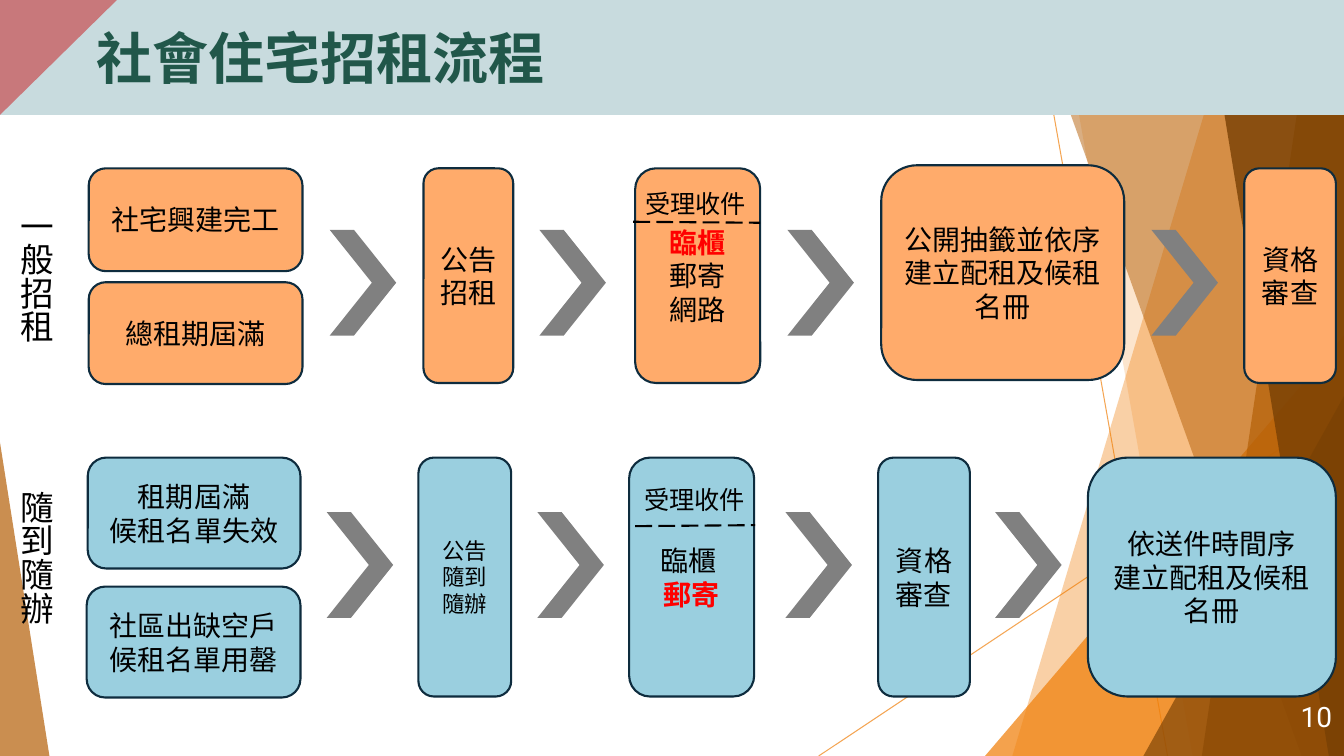
from lxml import etree
from pptx import Presentation, util as u
from pptx.dml.color import RGBColor
from pptx.enum import dml, shapes as s, text as t
from pptx.oxml.ns import qn

deck = Presentation()
deck.slide_width, deck.slide_height = u.Inches(13.33), u.Inches(7.5)
page = deck.slides.add_slide(deck.slide_layouts[6])
kit = page.shapes
# One column and one row of the grid
col, row = deck.slide_width / 13.33, deck.slide_height / 7.5
hues = {"band": "C8DBDE", "title": "21574A", "corner": "C8787B",
        "warm": "FFAB6B", "cool": "9ACFDF", "edge": "0E2C3E",
        "arrow": "808080", "ink": "000000", "hot": "FF0000", "white": "FFFFFF",
        "amber": "F07F09", "rust": "B45F07", "brown": "784004"}
kinds = s.MSO_SHAPE
left, mid, right = t.PP_ALIGN.LEFT, t.PP_ALIGN.CENTER, t.PP_ALIGN.RIGHT


def paint(shape, hue, alpha=100):
    """Fill a shape, or colour a connector, with optional transparency."""
    if hasattr(shape, "begin_x"):
        fill = shape.line.fill
        etree.SubElement(shape._element.spPr, qn("a:effectLst"))
    else:
        fill = shape.fill
        shape.shadow.inherit = False
        shape.line.fill.background()
    fill.solid()
    fill.fore_color.rgb = RGBColor.from_string(hues[hue])
    if alpha < 100:
        for tint in shape._element.spPr.iter(qn("a:srgbClr")):
            etree.SubElement(tint, qn("a:alpha")).set("val", str(alpha * 1000))


def write(shape, lines, size, hue="ink", align=mid, face="Noto Sans CJK SC", hot=""):
    """Set one paragraph per line; the line named hot is bold red."""
    frame = shape.text_frame
    frame.word_wrap = True
    frame.vertical_anchor = t.MSO_ANCHOR.MIDDLE
    for i, line in enumerate(lines):
        para = frame.paragraphs[0] if i == 0 else frame.add_paragraph()
        para.alignment = align
        run = para.add_run()
        run.text = line
        font = run.font
        font.size, font.name, font.bold = u.Pt(size), face, line == hot
        font.color.rgb = RGBColor.from_string(hues["hot" if line == hot else hue])
        if face != "Roboto":
            etree.SubElement(run._r.get_or_add_rPr(), qn("a:ea")).set("typeface", face)


# Thin rays behind the right edge
for x1, y1, x2, y2 in [(10.25, 0, 11.58, 7.5), (13.33, 4.03, 8.12, 7.5)]:
    ray = kit.add_connector(s.MSO_CONNECTOR.STRAIGHT, int(x1 * col), int(y1 * row),
                            int(x2 * col), int(y2 * row))
    ray.line.width = u.Pt(0.75)
    paint(ray, "amber", 70)

# Facets: a slab has top x and bottom x; a wedge has x, y, w, h and apex
facets = [("slab", (12.28, 10.04), "amber", 36),
          ("slab", (10.5, 11.83), "amber", 20),
          ("wedge", (9.77, 3.33, 3.56, 4.17, 1), "amber", 72),
          ("slab", (10.21, 12.91), "rust", 50),
          ("slab", (13.03, 11.92), "rust", 70),
          ("slab", (11.96, 13.18), "brown", 80),
          ("wedge", (11.34, 3.93, 1.99, 3.57, 1), "brown", 66),
          ("wedge", (0, 4.39, 0.49, 3.11, 0), "rust", 70)]
for kind, spot, hue, alpha in facets:
    if kind == "slab":
        top, base = spot
        pen = kit.build_freeform(int(top * col), 0)
        pen.add_line_segments([(int(x * col), int(y * row)) for x, y in
                               [(13.33, 0), (13.33, 7.5), (base, 7.5)]], close=True)
        facet = pen.convert_to_shape()
    else:
        x, y, w, h, apex = spot
        facet = kit.add_shape(kinds.ISOSCELES_TRIANGLE, int(x * col), int(y * row),
                              int(w * col), int(h * row))
        facet.adjustments[0] = apex
    paint(facet, hue, alpha)

# Title band and corner
band = kit.add_shape(kinds.RECTANGLE, 0, 0, deck.slide_width, int(1.14 * row))
paint(band, "band")
write(band, ["社會住宅招租流程"], 40, "title", left)
band.text_frame.paragraphs[0].runs[0].font.bold = True
band.text_frame.margin_left = int(0.96 * col)
corner = kit.add_shape(kinds.RIGHT_TRIANGLE, int(0.01 * col), int(-0.01 * row),
                       int(1.14 * col), int(1.16 * row))
corner.rotation = 90
paint(corner, "corner")

# Step boxes: x, y, w, h, hue, size, lines, hot line
steps = [
    (0.88, 1.67, 2.12, 1.02, "warm", 20, ["社宅興建完工"], ""),
    (0.88, 2.8, 2.12, 1.01, "warm", 20, ["總租期屆滿"], ""),
    (4.2, 1.67, 0.89, 2.13, "warm", 20, ["公告招租"], ""),
    (6.3, 1.67, 1.24, 2.13, "warm", 20, ["臨櫃", "郵寄", "網路"], "臨櫃"),
    (8.74, 1.64, 2.41, 2.13, "warm", 20, ["公開抽籤並依序", "建立配租及候租名冊"], ""),
    (12.34, 1.67, 0.91, 2.13, "warm", 20, ["資格審查"], ""),
    (0.87, 4.54, 2.11, 1.1, "cool", 20, ["租期屆滿", "候租名單失效"], ""),
    (0.86, 5.82, 2.12, 1.1, "cool", 20, ["社區出缺空戶", "候租名單用罄"], ""),
    (4.15, 4.54, 0.92, 2.37, "cool", 16, ["公告隨到隨辦"], ""),
    (6.24, 4.54, 1.24, 2.37, "cool", 20, ["臨櫃 ", "郵寄"], "郵寄"),
    (8.71, 4.54, 0.91, 2.37, "cool", 20, ["資格審查"], ""),
    (10.79, 4.54, 2.46, 2.37, "cool", 20, ["依送件時間序", "建立配租及候租名冊"], "")]
for x, y, w, h, hue, size, lines, hot in steps:
    box = kit.add_shape(kinds.ROUNDED_RECTANGLE, int(x * col), int(y * row),
                        int(w * col), int(h * row))
    paint(box, hue)
    box.line.color.rgb = RGBColor.from_string(hues["edge"])
    box.line.width = u.Pt(1.5)
    write(box, lines, size, hot=hot)

# Intake headings, each over a dashed rule
for x, y, h, x1, y1, x2, y2 in [(6.3, 1.81, 0.41, 6.28, 2.2, 7.54, 2.21),
                                (6.29, 4.75, 0.41, 6.3, 5.22, 7.49, 5.21)]:
    head = kit.add_textbox(int(x * col), int(y * row), int(1.24 * col), int(h * row))
    write(head, ["受理收件"], 18, align=left)
    rule = kit.add_connector(s.MSO_CONNECTOR.STRAIGHT, int(x1 * col), int(y1 * row),
                             int(x2 * col), int(y2 * row))
    paint(rule, "ink")
    rule.line.width = u.Pt(1.5)
    rule.line.dash_style = dml.MSO_LINE.LONG_DASH

# Chevrons between steps
for y, spots in [(2.28, (3.27, 5.35, 7.81, 11.42)), (5.08, (3.24, 5.33, 7.79, 9.87))]:
    for x in spots:
        arrow = kit.add_shape(kinds.CHEVRON, int(x * col), int(y * row),
                              int(0.66 * col), int(1.05 * row))
        arrow.adjustments[0] = 0.635
        paint(arrow, "arrow")

# Vertical row labels
for y, name in [(1.98, "一般招租"), (4.77, "隨到隨辦")]:
    label = kit.add_textbox(0, int(y * row), int(0.61 * col), int(1.45 * row))
    write(label, [name], 24, align=left)
    label.text_frame.word_wrap = False
    label.text_frame.vertical_anchor = t.MSO_ANCHOR.TOP
    label.text_frame._txBody.bodyPr.set("vert", "eaVert")

# Page number
number = kit.add_textbox(int(12.56 * col), int(6.91 * row), int(0.75 * col), int(0.4 * row))
write(number, ["10"], 20, "white", right, "Roboto")

deck.save("out.pptx")
